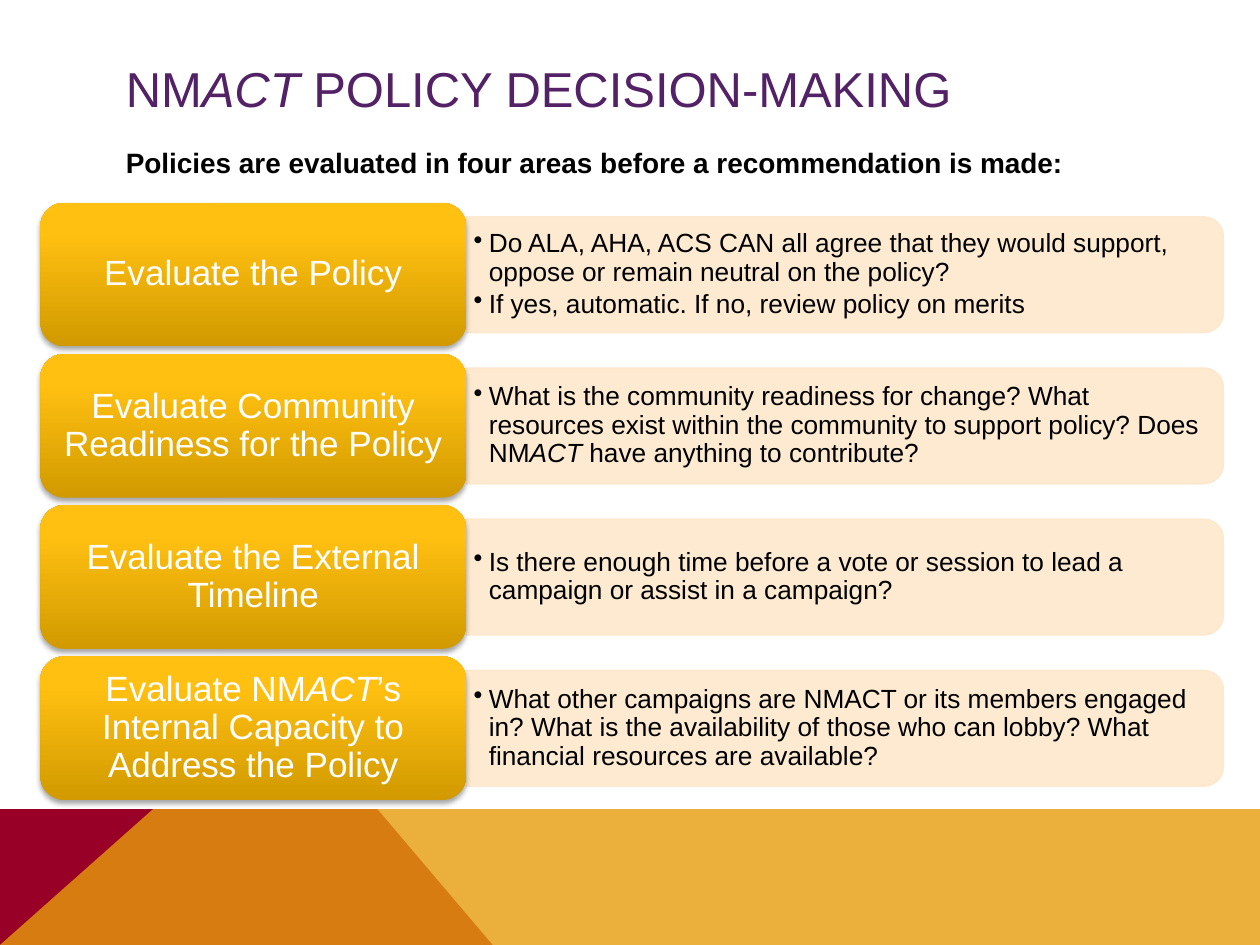
"""Build the policy decision-making slide with four evaluation areas."""
import copy

import pptx
import pptx.dml.color
import pptx.enum.shapes
import pptx.enum.text
import pptx.oxml
import pptx.oxml.ns
import pptx.util

Inches, Pt = pptx.util.Inches, pptx.util.Pt
RGB = pptx.dml.color.RGBColor.from_string
SHAPE = pptx.enum.shapes.MSO_SHAPE
ALIGN = pptx.enum.text.PP_ALIGN
ANCHOR = pptx.enum.text.MSO_ANCHOR
qn = pptx.oxml.ns.qn

TITLE = "NM*ACT* POLICY DECISION-MAKING"
INTRO = "Policies are evaluated in four areas before a recommendation is made:"
AREAS = [
    ("Evaluate the Policy",
     ["Do ALA, AHA, ACS CAN all agree that they would support, oppose or remain neutral on the policy?",
      "If yes, automatic. If no, review policy on merits"]),
    ("Evaluate Community Readiness for the Policy",
     ["What is the community readiness for change? What resources exist within the community "
      "to support policy? Does NM*ACT* have anything to contribute?"]),
    ("Evaluate the External Timeline",
     ["Is there enough time before a vote or session to lead a campaign or assist in a campaign?"]),
    ("Evaluate NM*ACT*’s Internal Capacity to Address the Policy",
     ["What other campaigns are NMACT or its members engaged in? What is the availability of "
      "those who can lobby? What financial resources are available?"]),
]
THEME = {
    "font": "Arial",
    "title": {"size": 28, "color": "532165"},
    "intro": {"size": 16, "color": "000000", "bold": True},
    "label": {"size": 20, "color": "FFFFFF"},
    "detail": {"size": 15, "color": "000000"},
    "white": "FFFFFF",
    "maroon": "990027",
    "gold": "E69B0B",
    "panel": "FDE8CD",
    "gradient": [(0, "D29A00"), (0.8, "FFC011"), (1, "FFC013")],
}
BANDS = [
    ("maroon", 100, [(0, 7.5), (0, 5.52), (2.23, 5.52), (3.91, 7.5)]),
    ("gold", 80, [(0, 7.5), (2.23, 5.52), (10, 5.53), (10, 7.5)]),
]
ROW_TOP, ROW_PITCH = 1.61, 1.2
LABEL_LEFT, LABEL_W, LABEL_H = 0.32, 3.38, 1.14
PANEL_LEFT, PANEL_W, PANEL_H = 3.7, 6.01, 0.92
DETAIL_W, DETAIL_H = 5.97, 0.83
HANGING = 0.12


def paint(s, color, alpha=100):
    s.shadow.inherit = False
    s.fill.solid()
    s.fill.fore_color.rgb = RGB(color)
    s.line.fill.background()
    set_alpha(s.fill, alpha, s._element.spPr.find(qn("a:solidFill")))


def set_alpha(fill, alpha, solid):
    if alpha < 100:
        node = pptx.oxml.parse_xml(
            f'<a:alpha {pptx.oxml.ns.nsdecls("a")} val="{alpha * 1000}"/>')
        solid[0].append(node)


def write(tf, texts, style, margins=(0.1, 0.05), anchor=ANCHOR.MIDDLE, bullet=False, **layout):
    x, y = (Inches(m) for m in margins)
    frame = {"word_wrap": True, "vertical_anchor": anchor, "margin_left": x,
             "margin_right": x, "margin_top": y, "margin_bottom": y}
    for name, value in frame.items():
        setattr(tf, name, value)
    for i, text in enumerate(texts):
        p = tf.paragraphs[0] if i == 0 else tf.add_paragraph()
        for name, value in layout.items():
            setattr(p, name, value)
        if bullet:
            pPr = p._p.get_or_add_pPr()
            pPr.set("marL", str(Inches(HANGING)))
            pPr.set("indent", str(-Inches(HANGING)))
            pPr.append(pptx.oxml.parse_xml(
                f'<a:buChar {pptx.oxml.ns.nsdecls("a")} char="•"/>'))
        for j, part in enumerate(text.split("*")):
            r = p.add_run()
            r.text = part
            font = {"name": THEME["font"], "size": Pt(style["size"]),
                    "bold": style.get("bold", False), "italic": j % 2 == 1}
            for name, value in font.items():
                setattr(r.font, name, value)
            r.font.color.rgb = RGB(style["color"])


def add_text(shapes, box, texts, style, **options):
    s = shapes.add_textbox(*(Inches(v) for v in box))
    write(s.text_frame, texts, THEME[style], **options)


def add_band(shapes, color, alpha, points):
    corners = [(Inches(x), Inches(y)) for x, y in points]
    builder = shapes.build_freeform(*corners[0])
    builder.add_line_segments(corners[1:], close=True)
    paint(builder.convert_to_shape(), THEME[color], alpha)


def add_panel(shapes, middle):
    left = PANEL_LEFT + (PANEL_W - PANEL_H) / 2
    s = shapes.add_shape(SHAPE.ROUND_2_SAME_RECTANGLE, Inches(left),
                         Inches(middle - PANEL_W / 2), Inches(PANEL_H), Inches(PANEL_W))
    s.rotation = 90
    paint(s, THEME["panel"], 90)
    s.line.color.rgb = RGB(THEME["panel"])
    s.line.width = Pt(0.75)
    set_alpha(s.line.fill, 90, s.line._ln.find(qn("a:solidFill")))


def add_label(shapes, top, text):
    s = shapes.add_shape(SHAPE.ROUNDED_RECTANGLE, Inches(LABEL_LEFT), Inches(top),
                         Inches(LABEL_W), Inches(LABEL_H))
    s.line.fill.background()
    s.fill.gradient()
    s.fill.gradient_angle = 90
    stops = s._element.spPr.find(qn("a:gradFill")).find(qn("a:gsLst"))
    stops.append(copy.deepcopy(stops[0]))
    for stop, (position, color) in zip(s.fill.gradient_stops, THEME["gradient"]):
        stop.position = position
        stop.color.rgb = RGB(color)
    s.shadow.inherit = False
    s._element.spPr.find(qn("a:effectLst")).append(pptx.oxml.parse_xml(
        f'<a:outerShdw {pptx.oxml.ns.nsdecls("a")} blurRad="{Pt(3.1)}" dist="{Pt(1.8)}" '
        'dir="5400000" rotWithShape="0"><a:srgbClr val="000000">'
        '<a:alpha val="35000"/></a:srgbClr></a:outerShdw>'))
    write(s.text_frame, [text], THEME["label"], margins=(0.13, 0.09),
          alignment=ALIGN.CENTER, line_spacing=0.9)


def main():
    prs = pptx.Presentation()
    prs.slide_width, prs.slide_height = Inches(10), Inches(7.5)
    shapes = prs.slides.add_slide(prs.slide_layouts[6]).shapes
    for band in BANDS:
        add_band(shapes, *band)
    add_text(shapes, (0.9, 0.4, 8.22, 0.6), [TITLE], "title")
    add_text(shapes, (0.9, 1.11, 8.22, 0.66), [INTRO], "intro", anchor=ANCHOR.TOP)
    cover = shapes.add_shape(SHAPE.RECTANGLE, 0, Inches(5.48), Inches(10), Inches(0.94))
    paint(cover, THEME["white"])
    for i, (label, details) in enumerate(AREAS):
        top = ROW_TOP + i * ROW_PITCH
        middle = top + LABEL_H / 2
        add_panel(shapes, middle)
        add_text(shapes, (PANEL_LEFT, middle - DETAIL_H / 2, DETAIL_W, DETAIL_H), details,
                 "detail", margins=(0.06, 0.03), bullet=True, line_spacing=0.9,
                 space_after=Pt(2))
        add_label(shapes, top, label)
    prs.save("out.pptx")


if __name__ == "__main__":
    main()
